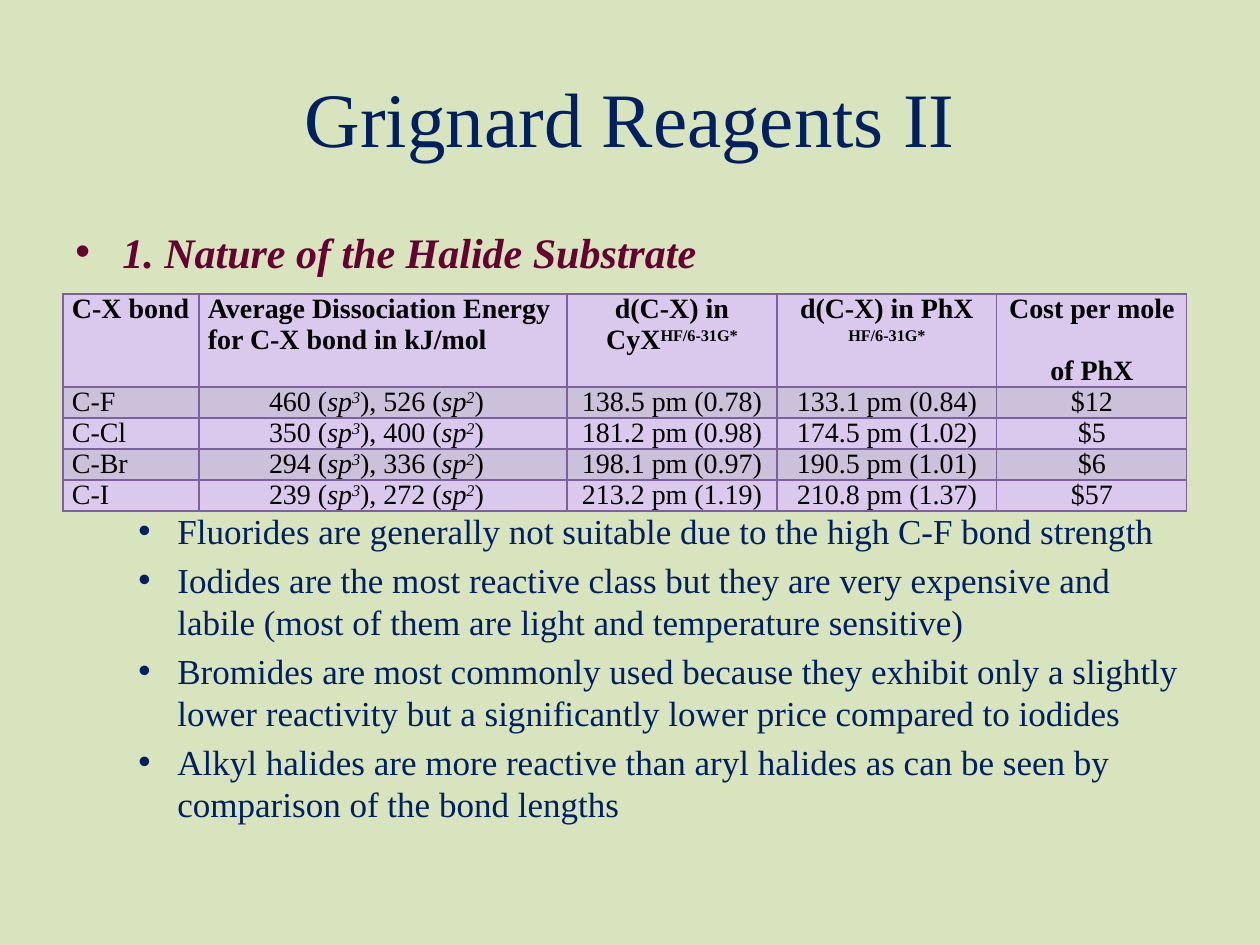
from dataclasses import dataclass

from lxml.etree import SubElement
from pptx import Presentation
from pptx.dml.color import RGBColor
from pptx.enum.text import MSO_ANCHOR, PP_ALIGN
from pptx.oxml.ns import qn
from pptx.util import Pt

EMU_PER_PX = 7257.14


@dataclass(frozen=True)
class Theme:
    font: str = "Times New Roman"
    background: str = "D7E4BD"
    navy: str = "002060"
    maroon: str = "660033"
    black: str = "000000"
    band: str = "CCC1DA"
    plain: str = "DBC9ED"
    border: str = "7D60A0"
    title_size: int = 44
    heading_size: int = 24
    bullet_size: int = 20
    table_size: int = 16
    table_line: float = 17.7


THEME = Theme()

HEADING = "1. Nature of the Halide Substrate"
BULLETS = [
    "Fluorides are generally not suitable due to the high C-F bond strength",
    "Iodides are the most reactive class but they are very expensive and labile "
    "(most of them are light and temperature sensitive)",
    "Bromides are most commonly used because they exhibit only a slightly lower "
    "reactivity but a significantly lower price compared to iodides",
    "Alkyl halides are more reactive than aryl halides as can be seen by "
    "comparison of the bond lengths",
]
HEADERS = [
    [[("C-X bond", "")]],
    [[("Average Dissociation Energy", "")], [("for C-X bond in kJ/mol", "")]],
    [[("d(C-X) in CyX", ""), ("HF/6-31G*", "super")]],
    [[("d(C-X) in PhX", ""), (" HF/6-31G*", "super")]],
    [[("Cost per mole", "")], [("of PhX", "")]],
]
BONDS = [
    ("C-F", 460, 526, "138.5 pm (0.78)", "133.1 pm (0.84)", "$12"),
    ("C-Cl", 350, 400, "181.2 pm (0.98)", "174.5 pm (1.02)", "$5"),
    ("C-Br", 294, 336, "198.1 pm (0.97)", "190.5 pm (1.01)", "$6"),
    ("C-I", 239, 272, "213.2 pm (1.19)", "210.8 pm (1.37)", "$57"),
]
COLUMN_WIDTHS = [136, 368, 210, 220, 190]
HEADER_HEIGHT, ROW_HEIGHT = 93, 30
ENERGY_COLUMN = 1


def px(length):
    return round(length * EMU_PER_PX)


def set_font(paragraph, size, color, bold=False, italic=False):
    font = paragraph.font
    font.name, font.size = THEME.font, Pt(size)
    font.bold, font.italic = bold, italic
    font.color.rgb = RGBColor.from_string(color)


def add_text_frame(slide, box):
    text_frame = slide.shapes.add_textbox(*map(px, box)).text_frame
    text_frame.word_wrap = True
    return text_frame


def add_title(slide, box):
    text_frame = add_text_frame(slide, box)
    text_frame.vertical_anchor = MSO_ANCHOR.MIDDLE
    paragraph = text_frame.paragraphs[0]
    paragraph.text = "Grignard Reagents II"
    paragraph.alignment = PP_ALIGN.CENTER
    set_font(paragraph, THEME.title_size, THEME.navy)


def set_bullet(paragraph, left, hanging):
    properties = paragraph._p.get_or_add_pPr()
    properties.set("marL", str(px(left)))
    properties.set("indent", str(-px(hanging)))
    SubElement(properties, qn("a:buFont")).set("typeface", "Arial")
    SubElement(properties, qn("a:buChar")).set("char", "•")


def add_body(slide, box):
    text_frame = add_text_frame(slide, box)
    heading = text_frame.paragraphs[0]
    heading.text = HEADING
    heading.line_spacing = Pt(THEME.heading_size * 1.2)
    set_bullet(heading, 47, 47)
    set_font(heading, THEME.heading_size, THEME.maroon, bold=True, italic=True)
    for index, text in enumerate(BULLETS):
        paragraph = text_frame.add_paragraph()
        paragraph.text = text
        paragraph.level = 1
        paragraph.line_spacing = Pt(THEME.bullet_size * 1.2)
        paragraph.space_before = Pt(4 if index else 133)
        set_bullet(paragraph, 102, 39)
        set_font(paragraph, THEME.bullet_size, THEME.navy)


def set_borders(cell):
    properties = cell._tc.get_or_add_tcPr()
    for side in ("lnL", "lnR", "lnT", "lnB"):
        line = SubElement(properties, qn(f"a:{side}"), w=str(Pt(0.75)))
        fill = SubElement(line, qn("a:solidFill"))
        SubElement(fill, qn("a:srgbClr")).set("val", THEME.border)


def set_end_mark(paragraph):
    end_mark = SubElement(paragraph._p, qn("a:endParaRPr"), sz=str(THEME.table_size * 100))
    SubElement(end_mark, qn("a:latin")).set("typeface", THEME.font)


def fill_cell(cell, lines, color, bold, centered):
    set_borders(cell)
    cell.fill.solid()
    cell.fill.fore_color.rgb = RGBColor.from_string(color)
    cell.margin_left = cell.margin_right = px(9)
    cell.margin_top = cell.margin_bottom = 0
    text_frame = cell.text_frame
    for index, pieces in enumerate(lines):
        paragraph = text_frame.add_paragraph() if index else text_frame.paragraphs[0]
        paragraph.alignment = PP_ALIGN.CENTER if centered else PP_ALIGN.LEFT
        paragraph.line_spacing = Pt(THEME.table_line)
        set_font(paragraph, THEME.table_size, THEME.black, bold)
        for text, style in pieces:
            run = paragraph.add_run()
            run.text = text
            if "italic" in style:
                run.font.italic = True
            if "super" in style:
                run._r.get_or_add_rPr().set("baseline", "30000")
        set_end_mark(paragraph)


def energy_pieces(alkyl, aryl):
    return [
        (f"{alkyl} (", ""), ("sp", "italic"), ("3", "italic super"),
        (f"), {aryl} (", ""), ("sp", "italic"), ("2", "italic super"), (")", ""),
    ]


def add_bond_table(slide, left, top):
    rows = [HEADERS]
    for bond, alkyl, aryl, *values in BONDS:
        rows.append([[[(bond, "")]], [energy_pieces(alkyl, aryl)]]
                    + [[[(value, "")]] for value in values])
    heights = [HEADER_HEIGHT] + [ROW_HEIGHT] * len(BONDS)
    box = (left, top, sum(COLUMN_WIDTHS), sum(heights))
    table = slide.shapes.add_table(len(rows), len(COLUMN_WIDTHS), *map(px, box)).table
    for column, width in zip(table.columns, COLUMN_WIDTHS):
        column.width = px(width)
    for row_index, lines_by_cell in enumerate(rows):
        table.rows[row_index].height = px(heights[row_index])
        is_header = row_index == 0
        color = THEME.band if row_index % 2 else THEME.plain
        for column_index, lines in enumerate(lines_by_cell):
            centered = column_index > (ENERGY_COLUMN if is_header else 0)
            fill_cell(table.cell(row_index, column_index), lines, color, is_header, centered)
        if not is_header:
            table.cell(row_index, ENERGY_COLUMN).margin_right = px(22)
    cost_header = table.cell(0, len(COLUMN_WIDTHS) - 1)
    cost_header.text_frame.paragraphs[1].space_before = Pt(THEME.table_line)


def main():
    presentation = Presentation()
    presentation.slide_width, presentation.slide_height = px(1260), px(945)
    slide = presentation.slides.add_slide(presentation.slide_layouts[6])
    slide.background.fill.solid()
    slide.background.fill.fore_color.rgb = RGBColor.from_string(THEME.background)
    add_title(slide, (63, 38, 1134, 158))
    add_body(slide, (63, 220, 1134, 624))
    add_bond_table(slide, 63, 294)
    presentation.save("out.pptx")


if __name__ == "__main__":
    main()
